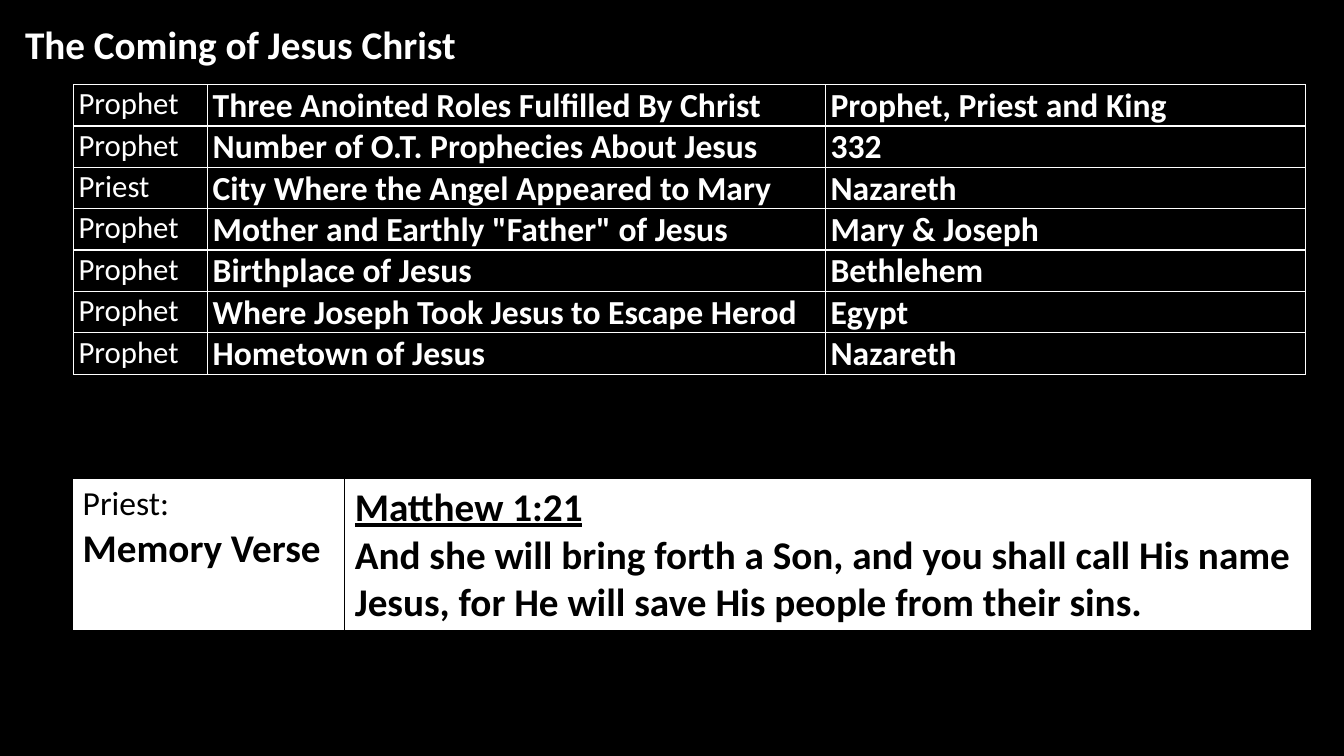
from pptx import Presentation
from pptx.dml.color import RGBColor
from pptx.enum.text import MSO_AUTO_SIZE
from pptx.oxml import parse_xml
from pptx.oxml.ns import nsdecls
from pptx.util import Inches, Pt

SHAPE_TO_FIT_TEXT = MSO_AUTO_SIZE.SHAPE_TO_FIT_TEXT
BLACK = RGBColor(0x00, 0x00, 0x00)
WHITE = RGBColor(0xFF, 0xFF, 0xFF)
FONT = "Calibri"
BLANK_LAYOUT = 6
BORDER_WIDTH = Pt(1)

# The slide is laid out on a square grid, ten units to the inch.
UNIT = Inches(0.1)
SLIDE_SIZE = (133.33, 75)
TITLE_BOX = (1.5, 1.5, 116.6, 5.7)
FACTS_ORIGIN = (7.3, 8.4)
FACTS_COLUMNS = (13.3, 61.3, 47.6)
FACTS_ROW = 4.1
FACTS_INSETS = (0.5, 0.1, 0.1, 0)
VERSE_ORIGIN = (7.2, 47.5)
VERSE_COLUMNS = (27, 95.9)
VERSE_ROW = 15
VERSE_INSETS = (1, 0.5, 1, 0.5)

FACTS = [
    ("Prophet", "Three Anointed Roles Fulfilled By Christ", "Prophet, Priest and King"),
    ("Prophet", "Number of O.T. Prophecies About Jesus", "332"),
    ("Priest", "City Where the Angel Appeared to Mary", "Nazareth"),
    ("Prophet", 'Mother and Earthly "Father" of Jesus', "Mary & Joseph"),
    ("Prophet", "Birthplace of Jesus", "Bethlehem"),
    ("Prophet", "Where Joseph Took Jesus to Escape Herod", "Egypt"),
    ("Prophet", "Hometown of Jesus", "Nazareth"),
]
VERSE = (
    "And she will bring forth a Son, and you shall call His name Jesus, "
    "for He will save His people from their sins."
)


def grid(*units):
    return [round(unit * UNIT) for unit in units]


def write(paragraph, text, *, size, color, bold=False, underline=False):
    run = paragraph.add_run()
    run.text = text
    font = run.font
    font.name = FONT
    font.size = Pt(size)
    font.bold = bold
    font.underline = underline
    font.color.rgb = color


def add_title(slide, text):
    box = slide.shapes.add_textbox(*grid(*TITLE_BOX))
    frame = box.text_frame
    frame.word_wrap = True
    frame.auto_size = SHAPE_TO_FIT_TEXT
    write(frame.paragraphs[0], text, size=28, color=WHITE, bold=True)


def set_borders(cell, color):
    """Line all four sides; the lines must precede the cell's fill in the XML."""
    properties = cell._tc.get_or_add_tcPr()
    for index, side in enumerate(("lnL", "lnR", "lnT", "lnB")):
        line = parse_xml(
            f'<a:{side} {nsdecls("a")} w="{BORDER_WIDTH}"><a:solidFill>'
            f'<a:srgbClr val="{color}"/></a:solidFill></a:{side}>'
        )
        properties.insert(index, line)


def add_plain_table(slide, origin, columns, row_height, row_count, *, insets, fill, border):
    size = (sum(columns), row_height * row_count)
    frame = slide.shapes.add_table(row_count, len(columns), *grid(*origin, *size))
    table = frame.table
    table.first_row = False
    table.horz_banding = False
    for column, width in zip(table.columns, grid(*columns)):
        column.width = width
    for row in table.rows:
        row.height = grid(row_height)[0]
    for cell in table.iter_cells():
        cell.margin_left, cell.margin_top, cell.margin_right, cell.margin_bottom = grid(*insets)
        cell.fill.solid()
        cell.fill.fore_color.rgb = fill
        set_borders(cell, border)
    return table


def add_facts(slide):
    table = add_plain_table(
        slide, FACTS_ORIGIN, FACTS_COLUMNS, FACTS_ROW, len(FACTS),
        insets=FACTS_INSETS, fill=BLACK, border=WHITE,
    )
    for row, fact in zip(table.rows, FACTS):
        for index, (cell, text) in enumerate(zip(row.cells, fact)):
            is_answer = index > 0
            write(cell.text_frame.paragraphs[0], text,
                  size=24 if is_answer else 22, color=WHITE, bold=is_answer)


def add_verse(slide):
    table = add_plain_table(
        slide, VERSE_ORIGIN, VERSE_COLUMNS, VERSE_ROW, 1,
        insets=VERSE_INSETS, fill=WHITE, border=BLACK,
    )
    label, verse = (table.cell(0, column).text_frame for column in range(2))
    write(label.paragraphs[0], "Priest:", size=24, color=BLACK)
    write(label.add_paragraph(), "Memory Verse", size=28, color=BLACK, bold=True)
    write(verse.paragraphs[0], "Matthew 1:21", size=28, color=BLACK, bold=True, underline=True)
    write(verse.add_paragraph(), VERSE, size=28, color=BLACK, bold=True)


def main():
    presentation = Presentation()
    presentation.slide_width, presentation.slide_height = grid(*SLIDE_SIZE)
    slide = presentation.slides.add_slide(presentation.slide_layouts[BLANK_LAYOUT])
    slide.background.fill.solid()
    slide.background.fill.fore_color.rgb = BLACK
    add_title(slide, "The Coming of Jesus Christ")
    add_facts(slide)
    add_verse(slide)
    presentation.save("out.pptx")


if __name__ == "__main__":
    main()
